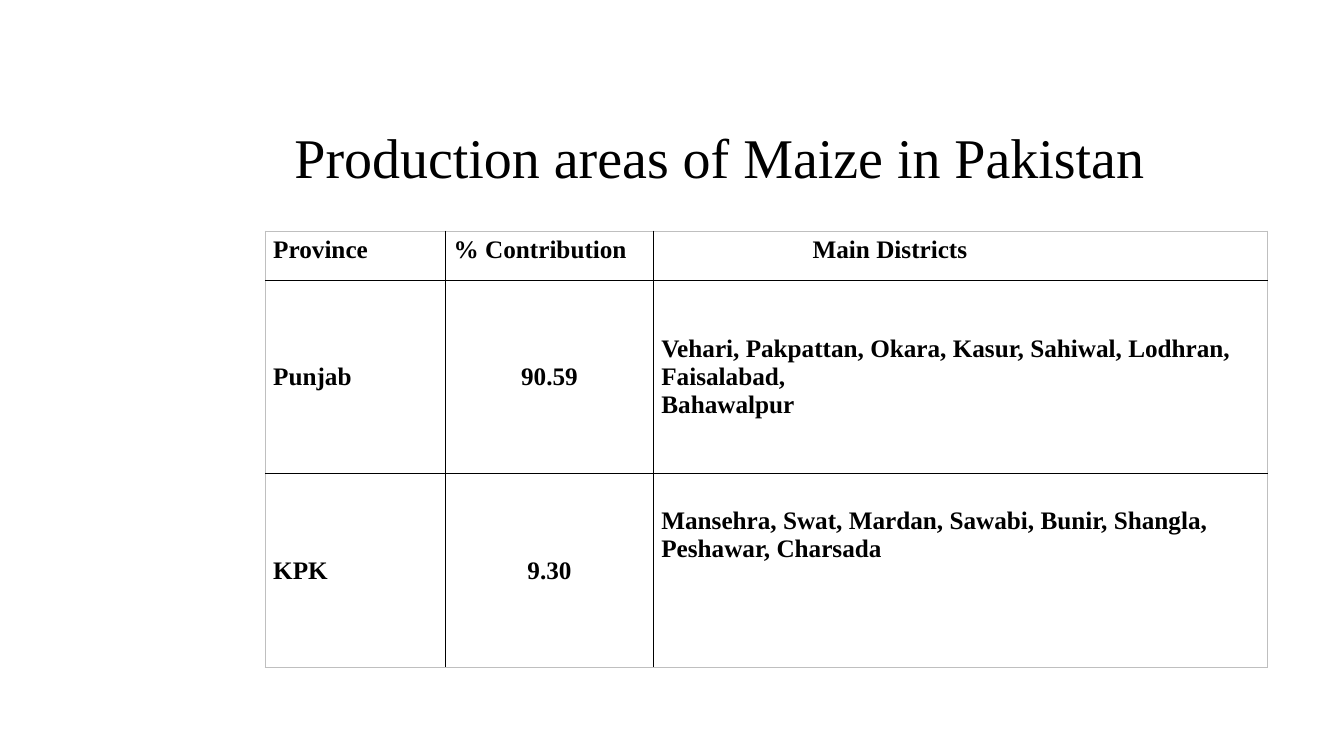
import pptx
import pptx.util
import pptx.dml.color
import pptx.enum.text
import pptx.oxml.ns
import lxml.etree

Inches = pptx.util.Inches
Pt = pptx.util.Pt
ALIGN = pptx.enum.text.PP_ALIGN
ANCHOR = pptx.enum.text.MSO_ANCHOR

FONT = "Times New Roman"
BLACK = "000000"
EDGE_GREY = "BFBFBF"
COLUMN_WIDTHS = [1.79, 2.06, 6.09]
ROW_HEIGHTS = [0.49, 1.92, 1.92]
PROVINCES = [
    ["Province", "% Contribution", "Main Districts"],
    ["Punjab", "90.59",
     "Vehari, Pakpattan, Okara, Kasur, Sahiwal, Lodhran, Faisalabad,\nBahawalpur"],
    ["KPK", "9.30",
     "Mansehra, Swat, Mardan, Sawabi, Bunir, Shangla, Peshawar, Charsada"],
]


def color(hex_value):
    return pptx.dml.color.RGBColor.from_string(hex_value)


def format_text(text_frame, size, bold, align):
    for paragraph in text_frame.paragraphs:
        paragraph.alignment = align
        for run in paragraph.runs:
            run.font.name = FONT
            run.font.size = Pt(size)
            run.font.bold = bold
            run.font.color.rgb = color(BLACK)


def add_borders(cell, outer_sides):
    properties = cell._tc.get_or_add_tcPr()
    qn = pptx.oxml.ns.qn
    for position, side in enumerate(["L", "R", "T", "B"]):
        outer = side in outer_sides
        line = lxml.etree.Element(qn(f"a:ln{side}"), w=str(Pt(0.5 if outer else 1)))
        fill = lxml.etree.SubElement(line, qn("a:solidFill"))
        lxml.etree.SubElement(fill, qn("a:srgbClr"), val=EDGE_GREY if outer else BLACK)
        properties.insert(position, line)


def add_heading(slide, left, top, width, height):
    heading = slide.shapes.title
    heading.left, heading.top = Inches(left), Inches(top)
    heading.width, heading.height = Inches(width), Inches(height)
    frame = heading.text_frame
    frame.text = "Production areas of Maize in Pakistan"
    frame.word_wrap = True
    frame.auto_size = pptx.enum.text.MSO_AUTO_SIZE.NONE
    frame.vertical_anchor = ANCHOR.MIDDLE
    frame.paragraphs[0].line_spacing = 0.9
    format_text(frame, 40, False, ALIGN.LEFT)


def add_province_table(slide, left, top):
    last_row, last_column = len(ROW_HEIGHTS) - 1, len(COLUMN_WIDTHS) - 1
    provinces = slide.shapes.add_table(
        len(ROW_HEIGHTS), len(COLUMN_WIDTHS), Inches(left), Inches(top),
        Inches(sum(COLUMN_WIDTHS)), Inches(sum(ROW_HEIGHTS))).table
    provinces.first_row = False
    provinces.horz_banding = False
    for column, width in zip(provinces.columns, COLUMN_WIDTHS):
        column.width = Inches(width)
    for row, height in zip(provinces.rows, ROW_HEIGHTS):
        row.height = Inches(height)

    for r, entries in enumerate(PROVINCES):
        for c, entry in enumerate(entries):
            cell = provinces.cell(r, c)
            cell.text_frame.text = entry
            cell.margin_left = cell.margin_right = Inches(0.08)
            cell.margin_top = cell.margin_bottom = Inches(0.05)
            cell.vertical_anchor = ANCHOR.MIDDLE if r else ANCHOR.TOP
            cell.fill.background()
            centered = r > 0 and c == 1
            format_text(cell.text_frame, 18, True, ALIGN.CENTER if centered else ALIGN.LEFT)
            edges = {"L": c == 0, "R": c == last_column, "T": r == 0, "B": r == last_row}
            add_borders(cell, [side for side, outer in edges.items() if outer])

    provinces.cell(0, last_column).margin_left = Inches(1.58)
    kpk_districts = provinces.cell(last_row, last_column)
    kpk_districts.vertical_anchor = ANCHOR.TOP
    kpk_districts.margin_top = Inches(0.33)


def main():
    deck = pptx.Presentation()
    deck.slide_width, deck.slide_height = Inches(13.33), Inches(7.5)
    slide = deck.slides.add_slide(deck.slide_layouts[5])
    slide.background.fill.solid()
    slide.background.fill.fore_color.rgb = color("FFFFFF")
    add_heading(slide, 2.82, 0.89, 9.75, 1.4)
    add_province_table(slide, 2.63, 2.29)
    deck.save("out.pptx")


if __name__ == "__main__":
    main()
